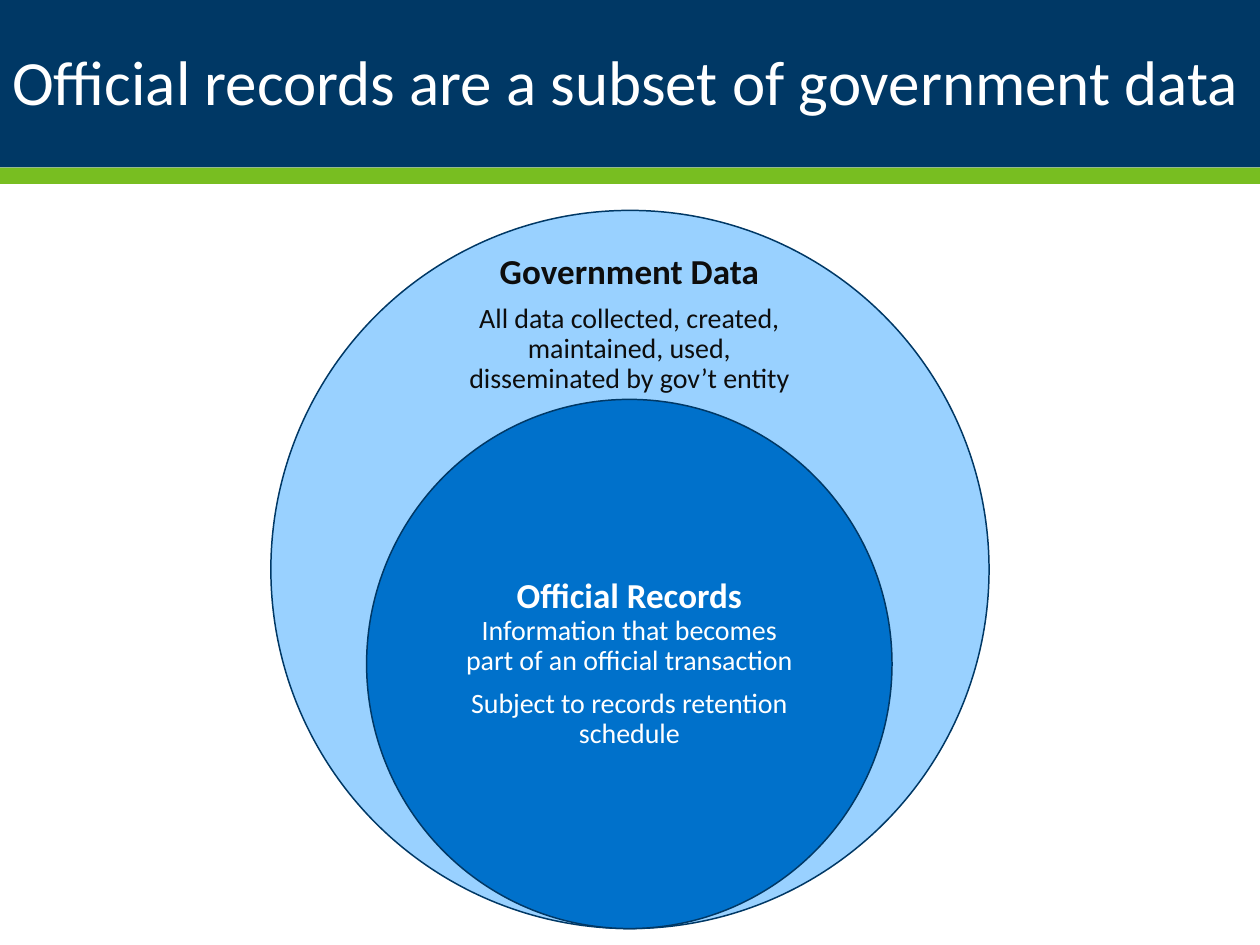
from pptx import Presentation
from pptx.dml.color import RGBColor
from pptx.enum import shapes as sh, text as tx
from pptx.util import Inches, Pt

NAVY = RGBColor(0x00, 0x38, 0x65)
GREEN = RGBColor(0x78, 0xBE, 0x21)
SKY = RGBColor(0x99, 0xD1, 0xFF)
BLUE = RGBColor(0x00, 0x71, 0xCB)
WHITE = RGBColor(0xFF, 0xFF, 0xFF)
BLACK = RGBColor(0x0D, 0x0D, 0x0D)
FONT = "Calibri"


def add_form(slide, kind, box, fill, line=None):
    form = slide.shapes.add_shape(kind, *map(Inches, box))
    form.shadow.inherit = False
    form.fill.solid()
    form.fill.fore_color.rgb = fill
    if line is None:
        form.line.fill.background()
    else:
        form.line.color.rgb = line
        form.line.width = Pt(0.85)


def add_text(slide, box, paras, color, align=tx.PP_ALIGN.CENTER,
             inset=(0.16, 0.16), after=7):
    """Each paragraph is a list of (words, size, bold) runs."""
    frame = slide.shapes.add_textbox(*map(Inches, box)).text_frame
    frame.word_wrap = True
    frame.vertical_anchor = tx.MSO_ANCHOR.MIDDLE
    frame.margin_left = frame.margin_right = Inches(inset[0])
    frame.margin_top = frame.margin_bottom = Inches(inset[1])
    for i, runs in enumerate(paras):
        para = frame.add_paragraph() if i else frame.paragraphs[0]
        para.alignment = align
        para.line_spacing = 0.9
        para.space_after = Pt(after)
        for words, size, bold in runs:
            run = para.add_run()
            run.text = words
            font = run.font
            font.name, font.size, font.bold = FONT, Pt(size), bold
            font.color.rgb = color


def add_header(slide, title):
    rect = sh.MSO_SHAPE.RECTANGLE
    add_form(slide, rect, (0, 0, 10, 1.33), NAVY)
    add_form(slide, rect, (0, 1.33, 10, 0.13), GREEN)
    add_text(slide, (0, 0, 10, 1.35), [[(title, 36, False)]], WHITE,
             align=tx.PP_ALIGN.LEFT, inset=(0.1, 0.05), after=0)


def add_circle(slide, box, fill, text_box, paras, color):
    add_form(slide, sh.MSO_SHAPE.OVAL, box, fill, NAVY)
    add_text(slide, text_box, paras, color)


def main():
    deck = Presentation()
    deck.slide_width, deck.slide_height = Inches(10), Inches(7.5)
    slide = deck.slides.add_slide(deck.slide_layouts[6])
    add_header(slide, "Official records are a subset of government data")
    add_circle(slide, (2.15, 1.67, 5.7, 5.7), SKY, (3.5, 2.09, 2.99, 0.97), [
        [("Government Data", 20, True)],
        [("All data collected, created, maintained, used, "
          "disseminated by gov’t entity", 16, False)],
    ], BLACK)
    add_circle(slide, (2.91, 3.17, 4.17, 4.2), BLUE, (3.52, 4.22, 2.95, 2.1), [
        [("Official Records", 20, True), (" ", 16, True),
         ("Information that becomes part of an official transaction",
          16, False)],
        [("Subject to records retention schedule", 16, False)],
    ], WHITE)
    deck.save("out.pptx")


if __name__ == "__main__":
    main()
